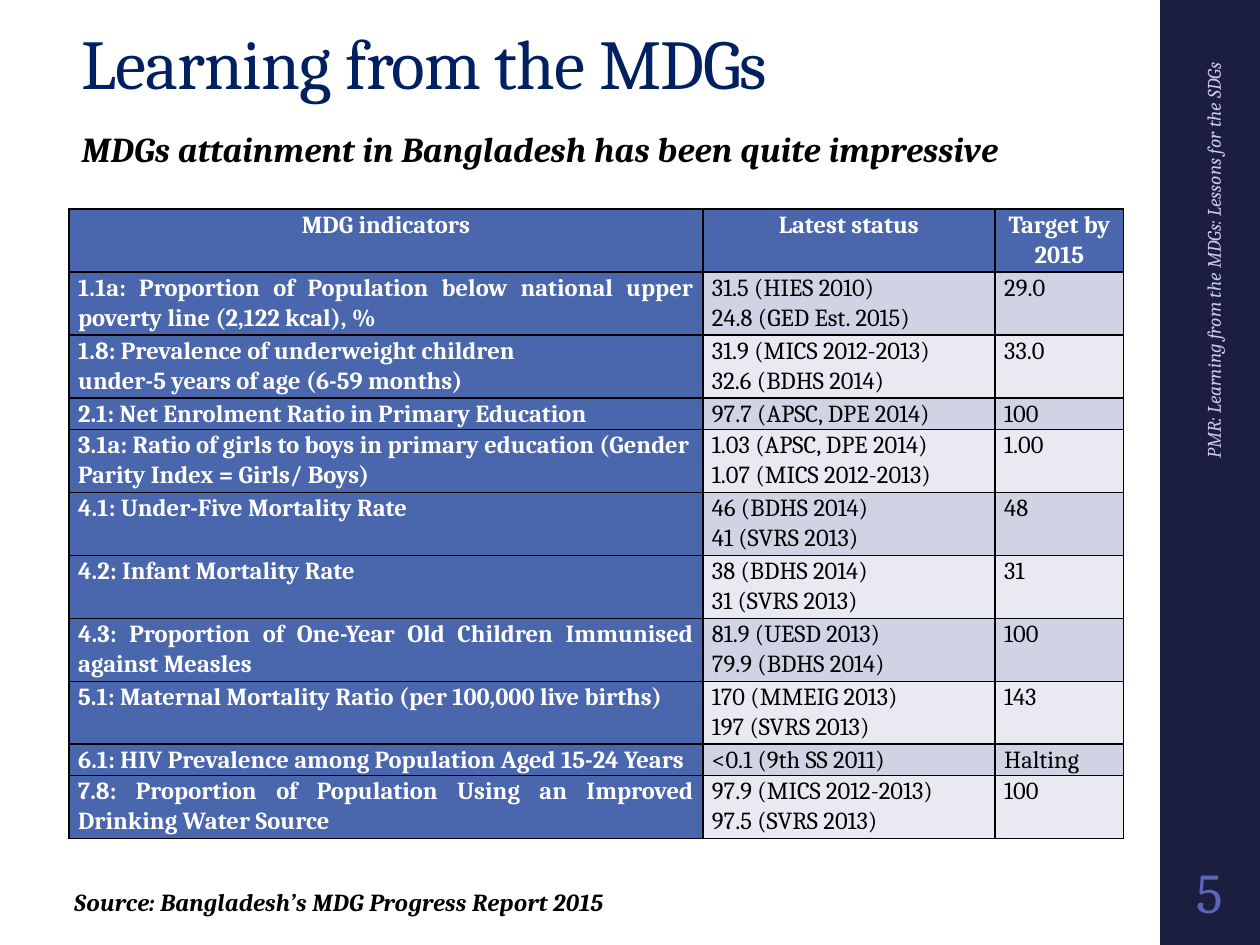
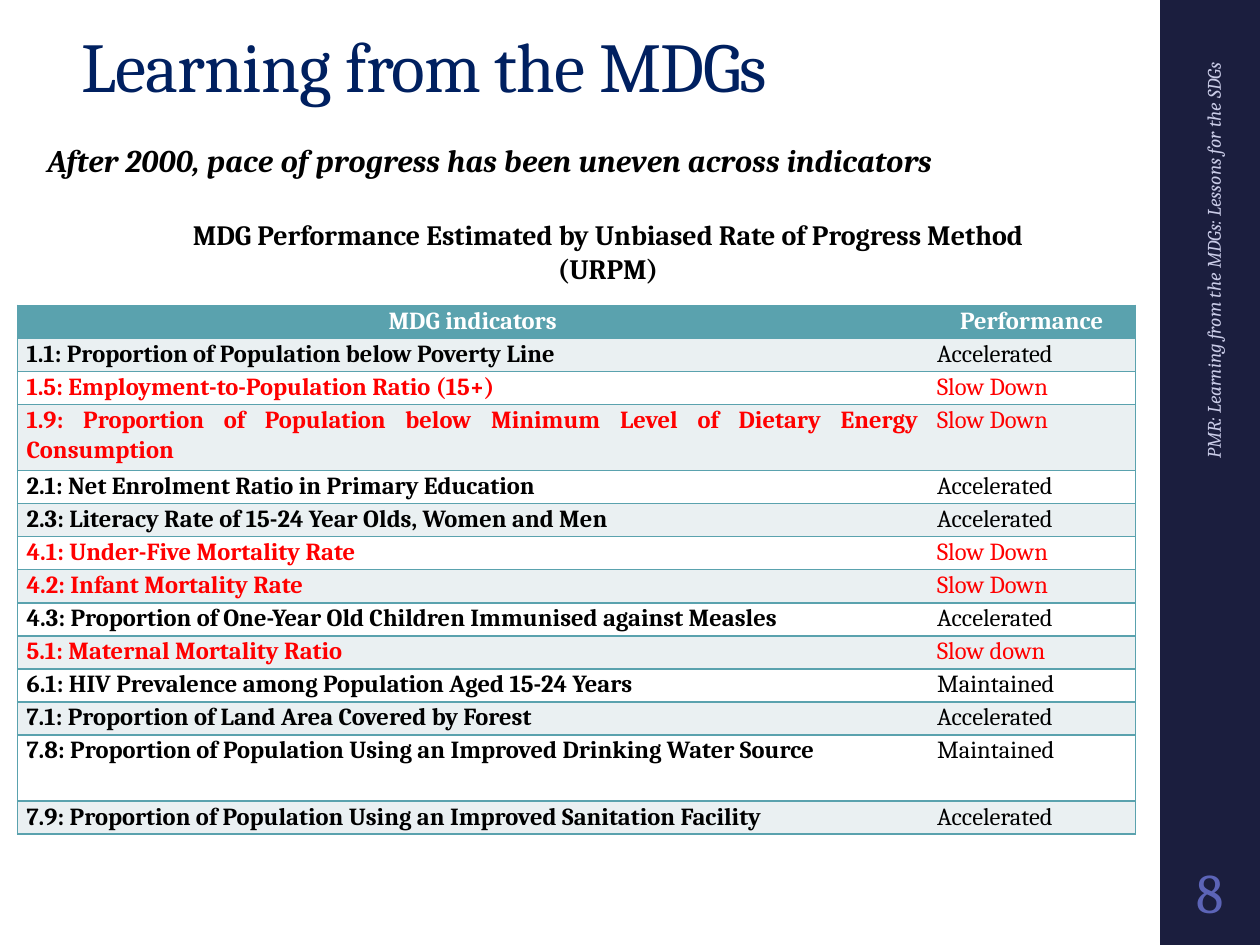
from dataclasses import dataclass

from lxml.etree import SubElement
from pptx import Presentation
from pptx.dml.color import RGBColor
from pptx.enum.shapes import MSO_SHAPE
from pptx.enum.text import MSO_ANCHOR, PP_ALIGN
from pptx.oxml.ns import qn
from pptx.util import Pt

# Content
TITLE = "Learning from the MDGs"
RUNNING_HEAD = "PMR: Learning from the MDGs: Lessons for the SDGs"

ATTAINMENT_HEADING = "MDGs attainment in Bangladesh has been quite impressive"
ATTAINMENT_SOURCE = "Source: Bangladesh’s MDG Progress Report 2015"
ATTAINMENT = [
    ("MDG indicators", "Latest status", "Target by 2015"),
    ("1.1a: Proportion of Population below national upper poverty line (2,122 kcal), %",
     "31.5 (HIES 2010)\n24.8 (GED Est. 2015)", "29.0"),
    ("1.8: Prevalence of underweight children\nunder-5 years of age (6-59 months)",
     "31.9 (MICS 2012-2013)\n32.6 (BDHS 2014)", "33.0"),
    ("2.1: Net Enrolment Ratio in Primary Education", "97.7 (APSC, DPE 2014)", "100"),
    ("3.1a: Ratio of girls to boys in primary education (Gender Parity Index = Girls/ Boys)",
     "1.03 (APSC, DPE 2014)\n1.07 (MICS 2012-2013)", "1.00"),
    ("4.1: Under-Five Mortality Rate", "46 (BDHS 2014)\n41 (SVRS 2013)", "48"),
    ("4.2: Infant Mortality Rate", "38 (BDHS 2014)\n31 (SVRS 2013)", "31"),
    ("4.3: Proportion of One-Year Old Children Immunised against Measles",
     "81.9 (UESD 2013)\n79.9 (BDHS 2014)", "100"),
    ("5.1: Maternal Mortality Ratio (per 100,000 live births)",
     "170 (MMEIG 2013)\n197 (SVRS 2013)", "143"),
    ("6.1: HIV Prevalence among Population Aged 15-24 Years", "<0.1 (9th SS 2011)", "Halting"),
    ("7.8: Proportion of Population Using an Improved Drinking Water Source",
     "97.9 (MICS 2012-2013)\n97.5 (SVRS 2013)", "100"),
]
ATTAINMENT_LINES = [2, 2, 2, 1, 2, 2, 2, 2, 2, 1, 2]
LEFT_ALIGNED = "3.1a"

PACE_HEADING = "After 2000, pace of progress has been uneven across indicators"
PACE_CAPTION = "MDG Performance Estimated by Unbiased Rate of Progress Method (URPM)"
PACE = [
    ("MDG indicators", "Performance"),
    ("1.1: Proportion of Population below Poverty Line", "Accelerated"),
    ("1.5: Employment-to-Population Ratio (15+)", "Slow Down"),
    ("1.9: Proportion of Population below Minimum Level of Dietary Energy Consumption",
     "Slow Down"),
    ("2.1: Net Enrolment Ratio in Primary Education", "Accelerated"),
    ("2.3: Literacy Rate of 15-24 Year Olds, Women and Men", "Accelerated"),
    ("4.1: Under-Five Mortality Rate", "Slow Down"),
    ("4.2: Infant Mortality Rate", "Slow Down"),
    ("4.3: Proportion of One-Year Old Children Immunised against Measles", "Accelerated"),
    ("5.1: Maternal Mortality Ratio", "Slow down"),
    ("6.1: HIV Prevalence among Population Aged 15-24 Years", "Maintained"),
    ("7.1: Proportion of Land Area Covered by Forest", "Accelerated"),
    ("7.8: Proportion of Population Using an Improved Drinking Water Source", "Maintained"),
    ("7.9: Proportion of Population Using an Improved Sanitation Facility", "Accelerated"),
]
PACE_LINES = [1, 1, 1, 2, 1, 1, 1, 1, 1, 1, 1, 1, 2, 1]


@dataclass(frozen=True)
class Theme:
    font: str = "Cambria"
    black: str = "000000"
    white: str = "FFFFFF"
    navy: str = "002060"
    band: str = "1B1E3E"
    number: str = "5C64B7"
    running: str = "C9CBE7"
    blue: str = "4A66AC"
    blue_rows: tuple = ("D0D3E3", "E9EAF1")
    teal: str = "5AA2AE"
    teal_rows: tuple = ("EAF0F2", "FFFFFF")
    slow: str = "FF0000"
    title_size: int = 40
    number_size: int = 32
    heading_size: int = 20
    subheading_size: int = 18
    caption_size: int = 16
    table_size: int = 14
    running_size: int = 11


THEME = Theme()


# Text
def style(paragraph, size, color, bold=False, italic=False, align=PP_ALIGN.LEFT,
          leading=1.0, tracking=0):
    paragraph.alignment = align
    paragraph.line_spacing = leading
    font = paragraph.font
    font.name, font.size, font.bold, font.italic = THEME.font, Pt(size), bold, italic
    font.color.rgb = RGBColor.from_string(color)
    if tracking:
        paragraph._p.pPr.find(qn("a:defRPr")).set("spc", str(round(tracking * 100)))


def add_text(slide, box, text, size, color, anchor=MSO_ANCHOR.TOP, side_inset=7.2, **look):
    label = slide.shapes.add_textbox(*map(Pt, box))
    frame = label.text_frame
    frame.word_wrap = True
    frame.vertical_anchor = anchor
    frame.margin_left = frame.margin_right = Pt(side_inset)
    frame.text = text
    style(frame.paragraphs[0], size, color, **look)
    return label


# Tables
def set_borders(cell, colors):
    """Draw left, right, top and bottom borders; None means no line."""
    properties = cell._tc.get_or_add_tcPr()
    for place, (side, color) in enumerate(zip("LRTB", colors)):
        line = SubElement(properties, qn(f"a:ln{side}"), w=str(Pt(1)))
        if color:
            fill = SubElement(line, qn("a:solidFill"))
            SubElement(fill, qn("a:srgbClr"), val=color)
        else:
            SubElement(line, qn("a:noFill"))
        properties.insert(place, line)


def add_grid(slide, left, top, widths, rows, lines, line_height, look_of, inner, border):
    """look_of(row, column, record) gives fill, text colour, bold and alignment."""
    heights = [count * line_height for count in lines]
    grid = slide.shapes.add_table(len(rows), len(widths), Pt(left), Pt(top),
                                  Pt(sum(widths)), Pt(sum(heights))).table
    grid.first_row = grid.horz_banding = False
    for column, width in zip(grid.columns, widths):
        column.width = Pt(width)
    for r, record in enumerate(rows):
        grid.rows[r].height = Pt(heights[r])
        for c, text in enumerate(record):
            fill, color, bold, align = look_of(r, c, record)
            cell = grid.cell(r, c)
            cell.margin_left = cell.margin_right = Pt(5.2)
            cell.margin_top = cell.margin_bottom = 0
            cell.fill.solid()
            cell.fill.fore_color.rgb = RGBColor.from_string(fill)
            cell.text = text
            for paragraph in cell.text_frame.paragraphs:
                style(paragraph, THEME.table_size, color, bold, align=align, leading=1.07)
            set_borders(cell, (border if c == 0 else inner,
                               border if c == len(widths) - 1 else inner, border, border))


def attainment_look(r, c, record):
    if r == 0:
        return THEME.blue, THEME.white, True, PP_ALIGN.CENTER
    if c == 0:
        left = record[0].startswith(LEFT_ALIGNED)
        return THEME.blue, THEME.white, True, PP_ALIGN.LEFT if left else PP_ALIGN.JUSTIFY
    return THEME.blue_rows[(r - 1) % 2], THEME.black, False, PP_ALIGN.LEFT


def pace_look(r, c, record):
    if r == 0:
        return THEME.teal, THEME.white, True, PP_ALIGN.CENTER
    color = THEME.slow if record[1].startswith("Slow") else THEME.black
    return THEME.teal_rows[(r - 1) % 2], color, c == 0, PP_ALIGN.JUSTIFY


# Shared slide frame
def add_framed_slide(deck, number, title_top):
    slide = deck.slides.add_slide(deck.slide_layouts[6])
    band = slide.shapes.add_shape(MSO_SHAPE.RECTANGLE, Pt(663), 0, Pt(57), Pt(540))
    band.shadow.inherit = False
    band.fill.solid()
    band.fill.fore_color.rgb = RGBColor.from_string(THEME.band)
    band.line.fill.background()
    add_text(slide, (39.6, title_top, 616, 44.6), TITLE, THEME.title_size, THEME.navy,
             MSO_ANCHOR.BOTTOM, leading=0.9, tracking=-0.5)
    add_text(slide, (664.5, 486, 54, 46.8), str(number), THEME.number_size, THEME.number,
             MSO_ANCHOR.MIDDLE, side_inset=2.2, align=PP_ALIGN.CENTER)
    running_head = add_text(slide, (514.8, 192.2, 357, 29.5), RUNNING_HEAD,
                            THEME.running_size, THEME.running, MSO_ANCHOR.MIDDLE,
                            italic=True, align=PP_ALIGN.RIGHT)
    running_head.rotation = 270
    return slide


def main():
    deck = Presentation()
    deck.slide_width, deck.slide_height = Pt(720), Pt(540)
    emphasis = dict(bold=True, italic=True, tracking=0.1)

    # Attainment against targets
    attainment = add_framed_slide(deck, 5, 18.7)
    add_text(attainment, (39.6, 72.7, 625, 48), ATTAINMENT_HEADING, THEME.heading_size,
             THEME.black, leading=0.85, **emphasis)
    add_grid(attainment, 39.5, 119.5, (362.2, 167, 73.5), ATTAINMENT, ATTAINMENT_LINES,
             17.2, attainment_look, inner=THEME.black, border=THEME.black)
    add_text(attainment, (35.3, 501.8, 602, 36.7), ATTAINMENT_SOURCE, THEME.table_size,
             THEME.black, leading=1.1, **emphasis)

    # Pace of progress
    pace = add_framed_slide(deck, 8, 20.2)
    add_text(pace, (20, 78.5, 628.5, 40), PACE_HEADING, THEME.subheading_size,
             THEME.black, leading=0.95, **emphasis)
    add_text(pace, (75, 121, 545, 46), PACE_CAPTION, THEME.caption_size, THEME.black,
             bold=True, align=PP_ALIGN.CENTER)
    add_grid(pace, 10, 174.5, (520.3, 118.5), PACE, PACE_LINES, 18.9, pace_look,
             inner=None, border=THEME.teal)

    deck.save("out.pptx")


if __name__ == "__main__":
    main()
